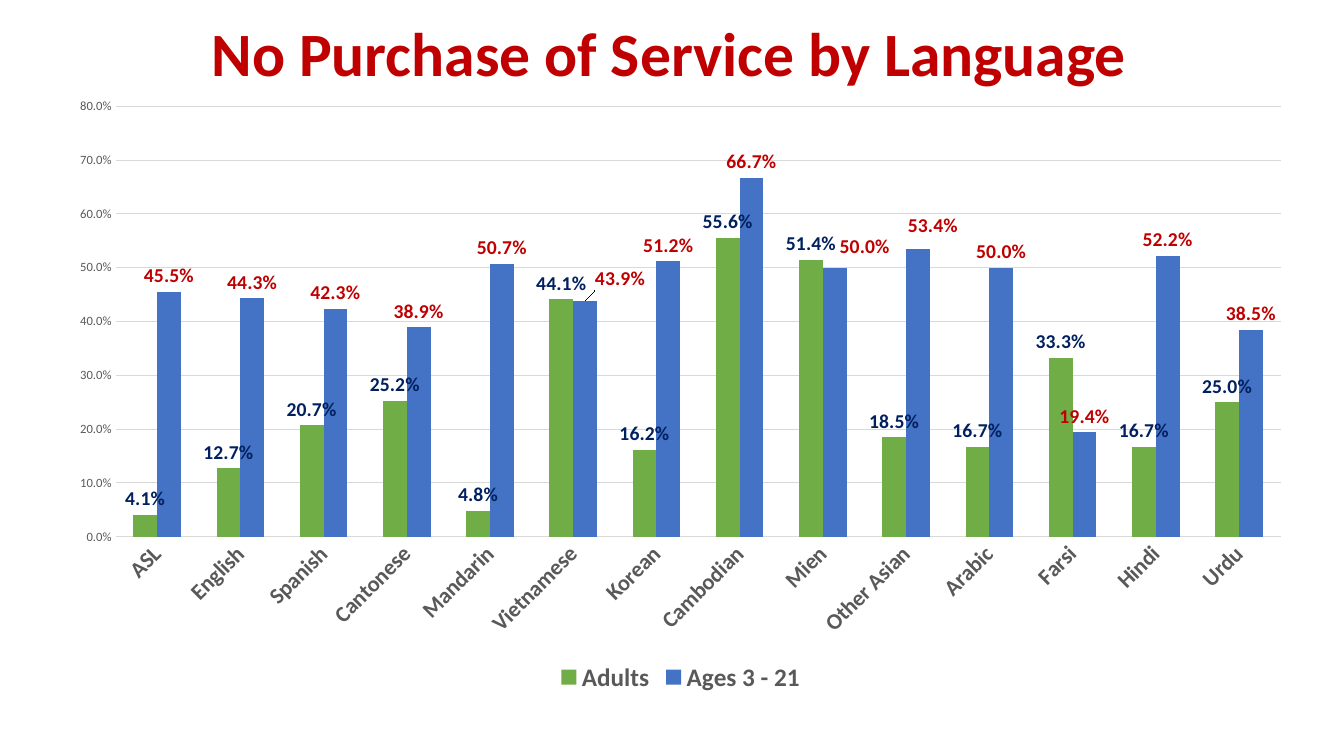
from dataclasses import dataclass

from lxml.etree import fromstring
from pptx import Presentation
from pptx.chart.data import CategoryChartData as ChartData
from pptx.dml.color import RGBColor as Color
from pptx.enum.chart import XL_CHART_TYPE as ChartType
from pptx.enum.chart import XL_LABEL_POSITION as LabelPosition
from pptx.enum.chart import XL_LEGEND_POSITION as LegendPosition
from pptx.enum.chart import XL_TICK_MARK as TickMark
from pptx.enum.text import MSO_ANCHOR as Anchor
from pptx.enum.text import PP_ALIGN as Align
from pptx.util import Inches, Pt


@dataclass(frozen=True)
class Theme:
    face: str = "Calibri"
    red: str = "C00000"
    navy: str = "002060"
    gray: str = "595959"
    grid: str = "D9D9D9"
    green: str = "70AD47"
    blue: str = "4472C4"
    title: int = 44
    legend: int = 18
    category: int = 16
    label: int = 14
    scale: int = 9


theme = Theme()
PERCENT = "0.0%"
CHART_NS = "http://schemas.openxmlformats.org/drawingml/2006/chart"


def style_font(font, size, color, bold=True):
    font.name, font.size, font.bold = theme.face, Pt(size), bold
    font.color.rgb = Color.from_string(color)


def manual_layout(**settings):
    """Build a chart layout element from its settings, in schema order."""
    rows = "".join(f'<c:{key} val="{value}"/>' for key, value in settings.items())
    return fromstring(
        f'<c:layout xmlns:c="{CHART_NS}"><c:manualLayout>{rows}</c:manualLayout></c:layout>'
    )


# Data: language, adults, ages 3 - 21
rates = [
    ("ASL", 0.041, 0.455),
    ("English", 0.127, 0.443),
    ("Spanish", 0.207, 0.423),
    ("Cantonese", 0.252, 0.389),
    ("Mandarin", 0.048, 0.507),
    ("Vietnamese", 0.441, 0.439),
    ("Korean", 0.162, 0.512),
    ("Cambodian", 0.556, 0.667),
    ("Mien", 0.514, 0.5),
    ("Other Asian", 0.185, 0.534),
    ("Arabic", 0.167, 0.5),
    ("Farsi", 0.333, 0.194),
    ("Hindi", 0.167, 0.522),
    ("Urdu", 0.25, 0.385),
]
languages, adult_rates, youth_rates = zip(*rates)

# Slide, measured in hundredths of its width and height
deck = Presentation()
deck.slide_width, deck.slide_height = Inches(13.33), Inches(7.5)
column, row = deck.slide_width / 100, deck.slide_height / 100
page = deck.slides.add_slide(deck.slide_layouts[5])

# Title
title = page.shapes.title
title.left, title.top = int(6.68 * column), int(1.2 * row)
title.width, title.height = int(86.27 * column), int(12.53 * row)
title.text_frame.text = "No Purchase of Service by Language"
title.text_frame.vertical_anchor = Anchor.MIDDLE
para = title.text_frame.paragraphs[0]
para.alignment, para.line_spacing = Align.CENTER, 0.9
style_font(para.font, theme.title, theme.red)

# Chart
data = ChartData(number_format=PERCENT)
data.categories = languages
data.add_series("Adults", adult_rates)
data.add_series("Ages 3 - 21", youth_rates)
chart = page.shapes.add_chart(
    ChartType.COLUMN_CLUSTERED,
    int(4.13 * column), int(11.47 * row), int(93.02 * column), int(80.8 * row),
    data,
).chart
chart.has_title = False
chart.font.name, chart.font.size = theme.face, Pt(10)
plot_area = chart.element.xpath("c:chart/c:plotArea")[0]
for old_layout in plot_area.xpath("c:layout"):
    plot_area.remove(old_layout)
plot_area.insert(0, manual_layout(
    layoutTarget="inner", xMode="edge", yMode="edge", x=0.048, y=0.032, w=0.932, h=0.705
))

# Legend
chart.has_legend = True
chart.legend.position = LegendPosition.BOTTOM
chart.legend.include_in_layout = False
style_font(chart.legend.font, theme.legend, theme.gray)

# Axes
for axis in (chart.category_axis, chart.value_axis):
    axis.major_tick_mark = axis.minor_tick_mark = TickMark.NONE
    axis.format.line.fill.background()
style_font(chart.category_axis.tick_labels.font, theme.category, theme.gray)
slant = chart.element.xpath(".//c:catAx/c:txPr/a:bodyPr")[0]
slant.set("rot", str(-45 * 60000))
scale = chart.value_axis
scale.minimum_scale, scale.maximum_scale, scale.major_unit = 0, 0.8, 0.1
scale.tick_labels.number_format = PERCENT
scale.tick_labels.number_format_is_linked = False
style_font(scale.tick_labels.font, theme.scale, theme.gray, bold=False)
scale.has_major_gridlines = True
grid_line = scale.major_gridlines.format.line
grid_line.color.rgb, grid_line.width = Color.from_string(theme.grid), Pt(0.75)

# Columns and their labels
plot = chart.plots[0]
plot.gap_width, plot.overlap, plot.vary_by_categories = 150, 0, False
series_colors = [(theme.green, theme.navy), (theme.blue, theme.red)]
for series, (bar_color, label_color) in zip(plot.series, series_colors):
    series.format.fill.solid()
    series.format.fill.fore_color.rgb = Color.from_string(bar_color)
    labels = series.data_labels
    labels.show_value = True
    labels.number_format, labels.number_format_is_linked = PERCENT, False
    labels.position = LabelPosition.OUTSIDE_END
    style_font(labels.font, theme.label, label_color)

# Labels shifted clear of their neighbours, in shares of the chart
shifts = {"Vietnamese": (0.028, -0.01), "Mien": (0.024, -0.008), "Other Asian": (0.012, -0.012)}
for language, (across, down) in shifts.items():
    index = languages.index(language)
    label = plot.series[1].points[index].data_label
    style_font(label.font, theme.label, theme.red)
    label.position = LabelPosition.OUTSIDE_END
    label_index = chart.element.xpath(f".//c:dLbl/c:idx[@val='{index}']")[0]
    label_index.addnext(manual_layout(x=across, y=down))

deck.save("out.pptx")
